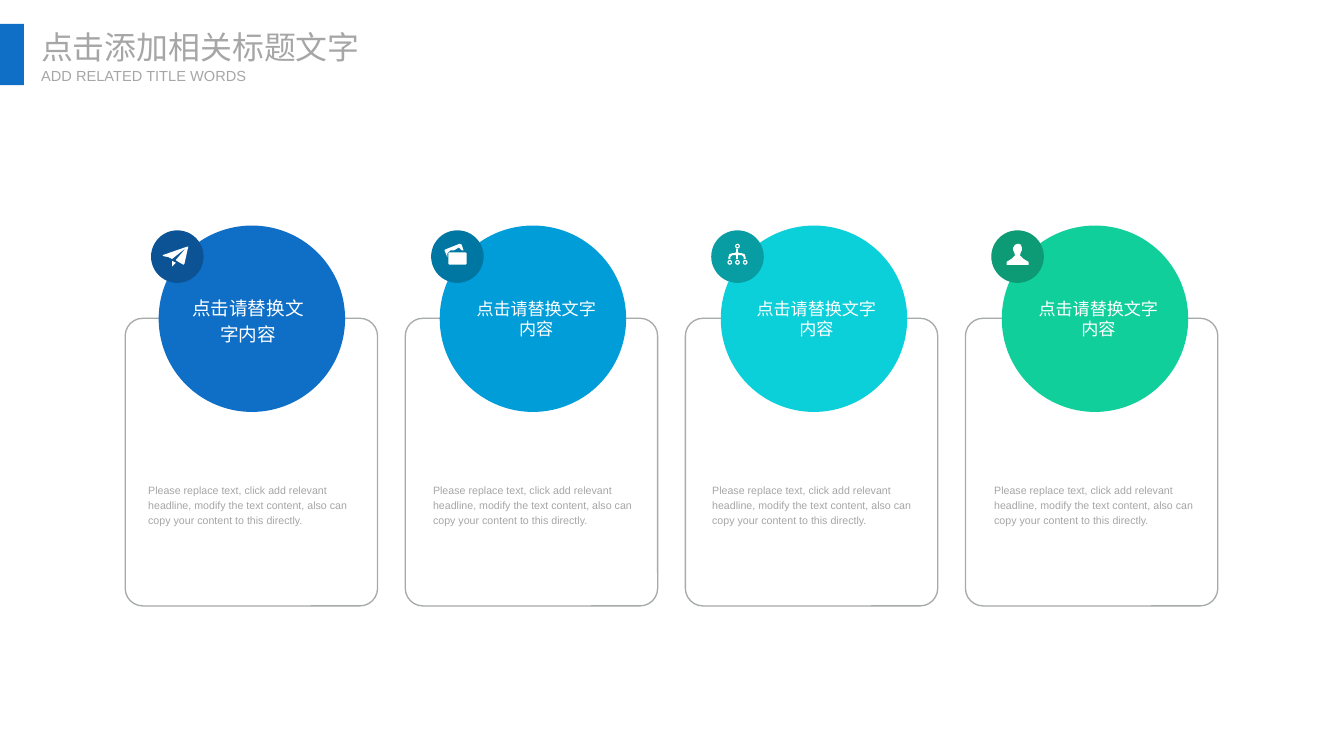
import pptx
import pptx.util
import pptx.dml.color
import pptx.enum.shapes
import pptx.enum.text

Inches = pptx.util.Inches
Pt = pptx.util.Pt
SHAPE = pptx.enum.shapes.MSO_SHAPE
ALIGN = pptx.enum.text.PP_ALIGN
ANCHOR = pptx.enum.text.MSO_ANCHOR
color = pptx.dml.color.RGBColor.from_string

presentation = pptx.Presentation()
presentation.slide_width = Inches(14.06)
presentation.slide_height = Inches(7.91)
slide = presentation.slides.add_slide(presentation.slide_layouts[6])


def paint(shape, fill=None, line=None):
    """Set a flat fill and a 1 pt line; None leaves either one out."""
    shape.shadow.inherit = False
    if fill:
        shape.fill.solid()
        shape.fill.fore_color.rgb = color(fill)
    else:
        shape.fill.background()
    if line:
        shape.line.color.rgb = color(line)
        shape.line.width = Pt(1)
    else:
        shape.line.fill.background()


def add_text(text, box, size, font_color, font="Arial", wrap=True,
             anchor=ANCHOR.MIDDLE, **paragraph_format):
    text_box = slide.shapes.add_textbox(*map(Inches, box))
    frame = text_box.text_frame
    frame_format = {
        "word_wrap": wrap, "vertical_anchor": anchor,
        "margin_left": 0, "margin_top": 0, "margin_right": 0, "margin_bottom": 0,
    }
    for name, value in frame_format.items():
        setattr(frame, name, value)
    paragraph = frame.paragraphs[0]
    for name, value in paragraph_format.items():
        setattr(paragraph, name, value)
    run = paragraph.add_run()
    run.text = text
    run.font.name = font
    run.font.size = Pt(size)
    run.font.color.rgb = color(font_color)


# Icon outlines, in hundredths of an inch from the badge's top left corner
plane = [
    [(38, 17), (12, 26), (13, 27), (18, 28), (22, 30), (37, 18), (26, 31),
     (27, 32), (34, 36), (35, 35), (39, 17)],
    [(22, 38), (26, 34), (22, 32)],
]
folders = [
    [(34, 21), (32, 15), (30, 14), (15, 20), (14, 21), (17, 28), (17, 24),
     (20, 21), (24, 21), (29, 18), (32, 21)],
    [(18, 24), (19, 23), (36, 23), (37, 24), (37, 35), (36, 36), (19, 36), (18, 35)],
]
tree = [
    [(26, 19), (28, 19), (28, 23), (30, 24), (32, 24), (35, 25), (36, 28),
     (36, 30), (34, 30), (34, 28), (32, 26), (28, 26), (28, 30), (26, 30),
     (26, 26), (22, 26), (20, 28), (20, 30), (18, 30), (18, 28), (19, 25),
     (22, 24), (24, 24), (26, 23)],
]
tree_nodes = [(25, 14), (17, 31), (25, 31), (33, 31)]
person = [
    [(34, 30), (30, 26), (31, 23), (32, 21), (32, 18), (31, 15), (28, 14),
     (25, 15), (23, 18), (23, 21), (24, 23), (25, 26), (21, 30), (16, 33),
     (16, 36), (39, 36), (39, 33)],
]

GREY, WHITE = "A6A6A6", "FFFFFF"
BODY = ("Please replace text, click add relevant headline, modify the text content, "
        "also can copy your content to this directly.")
large_label = {"size": 14, "line_spacing": 1.2, "space_before": Pt(2.8)}
small_label = {"size": 12.9, "space_before": Pt(10)}

# circle colour, badge colour, icon, icon rings, label left, label width, label format, body left
columns = [
    ("0F6FC6", "0B5394", plane, [], 1.94, 1.31, large_label, 1.55),
    ("009DD9", "0076A3", folders, [], 4.91, 1.4, small_label, 4.53),
    ("0BD0D9", "089CA3", tree, tree_nodes, 7.84, 1.4, small_label, 7.45),
    ("10CF9B", "0C9B74", person, [], 10.79, 1.4, small_label, 10.4),
]

for index, column in enumerate(columns):
    (circle_color, badge_color, icon, rings,
     label_left, label_width, label_format, body_left) = column

    card = slide.shapes.add_shape(
        SHAPE.ROUNDED_RECTANGLE, Inches(1.31 + 2.93 * index), Inches(3.33),
        Inches(2.64), Inches(3.01))
    card.adjustments[0] = 0.07
    paint(card, line="A6AAA9")

    circle = slide.shapes.add_shape(
        SHAPE.OVAL, Inches(1.66 + 2.94 * index), Inches(2.36), Inches(1.95), Inches(1.95))
    paint(circle, circle_color)

    badge_left, badge_top = 1.58 + 2.93 * index, 2.41
    badge = slide.shapes.add_shape(
        SHAPE.OVAL, Inches(badge_left), Inches(badge_top), Inches(0.55), Inches(0.55))
    paint(badge, badge_color)

    for outline in icon:
        points = [(Inches(badge_left + x / 100), Inches(badge_top + y / 100))
                  for x, y in outline]
        builder = slide.shapes.build_freeform(*points[0])
        builder.add_line_segments(points[1:], close=True)
        paint(builder.convert_to_shape(), WHITE)
    for x, y in rings:
        ring = slide.shapes.add_shape(
            SHAPE.DONUT, Inches(badge_left + x / 100), Inches(badge_top + y / 100),
            Inches(0.05), Inches(0.05))
        paint(ring, WHITE)

    add_text("点击请替换文字内容", (label_left, 3.11, label_width, 0.45),
             font_color=WHITE, alignment=ALIGN.CENTER, **label_format)
    add_text(BODY, (body_left, 4.62, 2.09, 1.31), 8, GREY,
             line_spacing=1.2, space_before=Pt(10))

title_bar = slide.shapes.add_shape(
    SHAPE.RECTANGLE, Inches(0), Inches(0.25), Inches(0.25), Inches(0.64))
paint(title_bar, "0F6FC6")
add_text("点击添加相关标题文字", (0.43, 0.29, 3.37, 0.4), 24, GREY,
         font="Noto Sans CJK SC", wrap=False, anchor=ANCHOR.TOP)
add_text("ADD RELATED TITLE WORDS", (0.43, 0.7, 2.18, 0.19), 11, GREY,
         wrap=False, anchor=ANCHOR.TOP)

presentation.save("out.pptx")
